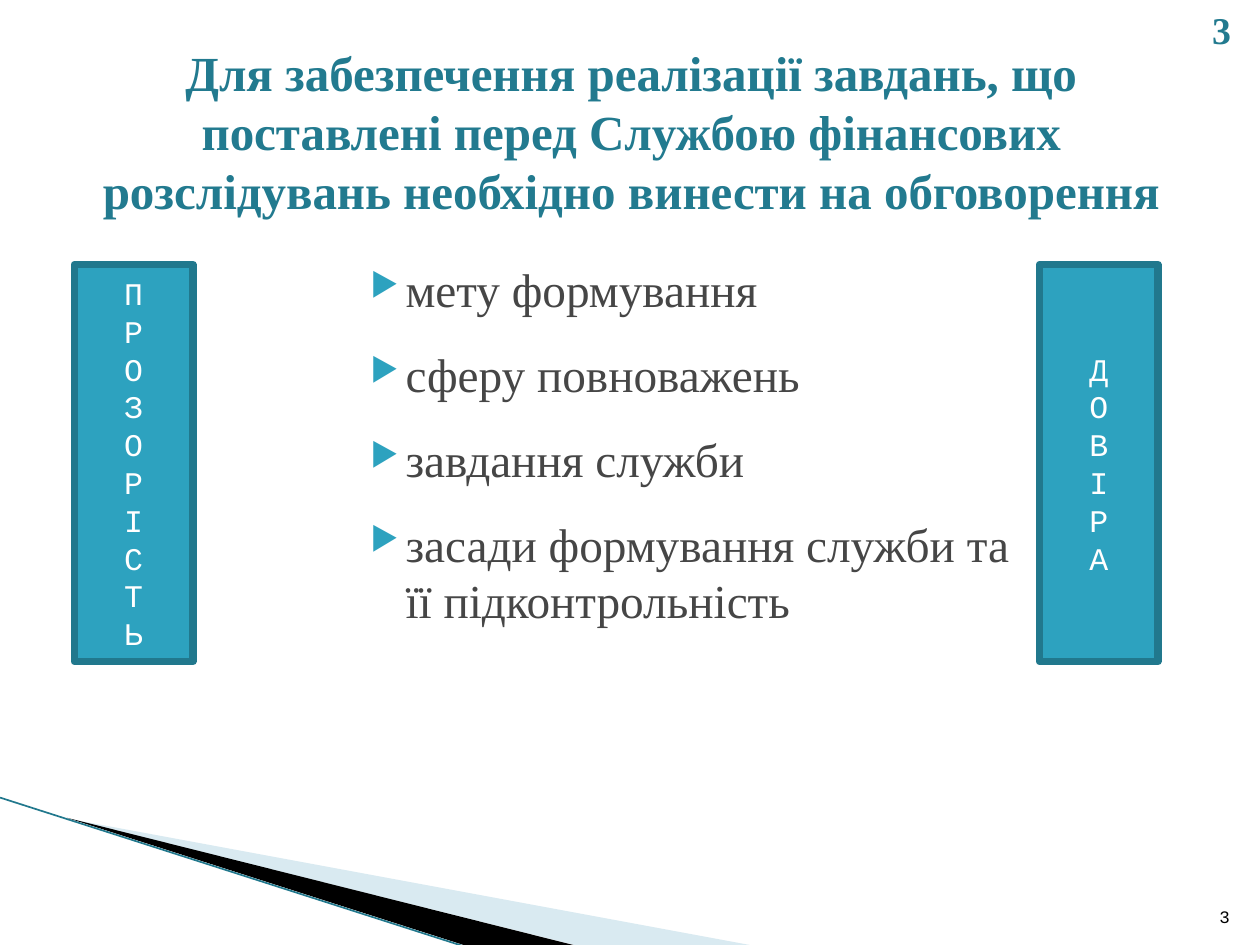
"""Builds the slide on topics for discussion between two vertical banners."""
import pptx
import pptx.dml.color
import pptx.enum.shapes
import pptx.enum.text
import pptx.oxml
import pptx.oxml.ns
import pptx.util

ALIGN = pptx.enum.text.PP_ALIGN
ANCHOR = pptx.enum.text.MSO_ANCHOR
SERIF = "Times New Roman"
MONO = "Courier New"
NAMESPACE = pptx.oxml.ns.nsdecls("a")

presentation = pptx.Presentation()
presentation.slide_width = pptx.util.Inches(10)
presentation.slide_height = pptx.util.Inches(7.5)
column = presentation.slide_width / 100
row = presentation.slide_height / 75
slide = presentation.slides.add_slide(presentation.slide_layouts[5])


def paint(target, color):
    if hasattr(target, "solid"):
        target.solid()
        target = target.fore_color
    elif hasattr(target, "color"):
        target = target.color
    target.rgb = pptx.dml.color.RGBColor.from_string(color)


def write(shape, text, size=18, font=SERIF, color="227A8F", bold=False,
          align=ALIGN.CENTER, anchor=ANCHOR.MIDDLE, bullet=None):
    frame = shape.text_frame
    frame.word_wrap = True
    frame.auto_size = pptx.enum.text.MSO_AUTO_SIZE.NONE
    frame.vertical_anchor = anchor
    for index, line in enumerate(text.split("\n")):
        paragraph = frame.add_paragraph() if index else frame.paragraphs[0]
        paragraph.alignment = align
        if bullet:
            paragraph.space_before = pptx.util.Pt(4 if index else 0)
            paragraph.space_after = pptx.util.Pt(12)
            properties = paragraph._p.get_or_add_pPr()
            properties.set("marL", str(round(4 * column)))
            properties.set("indent", str(round(-2.8 * column)))
            for xml in (f'<a:buClr {NAMESPACE}><a:srgbClr val="2DA2BF"/></a:buClr>',
                        f'<a:buSzPct {NAMESPACE} val="68000"/>',
                        f'<a:buChar {NAMESPACE} char="{bullet}"/>'):
                properties.append(pptx.oxml.parse_xml(xml))
        run = paragraph.add_run()
        run.text = line
        run.font.size = pptx.util.Pt(size)
        run.font.name = font
        run.font.bold = bold
        paint(run.font, color)


for color, opacity, points in (
    ("A0CBDC", 40, ((5.5, 65), (59.5, 75), (45.6, 75))),
    ("000000", 100, ((5.3, 64.9), (45.5, 75), (36.8, 75))),
):
    corners = [(round(x * column), round(y * row)) for x, y in points]
    builder = slide.shapes.build_freeform(*corners[0])
    builder.add_line_segments(corners[1:], close=True)
    wedge = builder.convert_to_shape()
    wedge.shadow.inherit = False
    paint(wedge.fill, color)
    wedge.line.fill.background()
    wedge.fill._xPr.find(".//" + pptx.oxml.ns.qn("a:srgbClr")).append(
        pptx.oxml.parse_xml(f'<a:alpha {NAMESPACE} val="{opacity * 1000}"/>'))

edge = slide.shapes.add_connector(
    pptx.enum.shapes.MSO_CONNECTOR.STRAIGHT,
    0, round(63.3 * row), round(37.1 * column), round(75.2 * row))
paint(edge.line, "21788D")
edge.line.width = pptx.util.Pt(0.95)
edge._element.spPr.append(pptx.oxml.parse_xml(f"<a:effectLst {NAMESPACE}/>"))

title = slide.shapes.title
title.left, title.top = round(4.3 * column), round(2.9 * row)
title.width, title.height = round(91.6 * column), round(15 * row)
write(title, "Для забезпечення реалізації завдань, що поставлені перед Службою "
      "фінансових розслідувань необхідно винести на обговорення", size=28, bold=True)

for left, word in ((5.9, "ПРОЗОРІСТЬ"), (82.5, "ДОВІРА")):
    banner = slide.shapes.add_shape(
        pptx.enum.shapes.MSO_SHAPE.RECTANGLE, round(left * column),
        round(21 * row), round(9.4 * column), round(31.5 * row))
    banner.shadow.inherit = False
    paint(banner.fill, "2DA2BF")
    paint(banner.line, "21788D")
    banner.line.width = pptx.util.Pt(4.33)
    write(banner, "\n".join(word), font=MONO, color="FFFFFF")

topics = "\n".join((
    "мету формування",
    "сферу повноважень",
    "завдання служби",
    "засади формування служби та її підконтрольність",
))
for left, top, width, height, text, style in (
    (27.2, 20.2, 55.1, 30.7, topics,
     dict(size=27, color="464646", align=ALIGN.LEFT, anchor=ANCHOR.TOP, bullet="▶")),
    (94.6, 70.1, 4, 4, "3",
     dict(size=10, font=MONO, color="000000", align=ALIGN.RIGHT, anchor=ANCHOR.BOTTOM)),
    (94.6, 0.2, 4.7, 4.3, "3", dict(size=21.6, bold=True)),
):
    box = slide.shapes.add_textbox(round(left * column), round(top * row),
                                   round(width * column), round(height * row))
    write(box, text, **style)

presentation.save("out.pptx")
